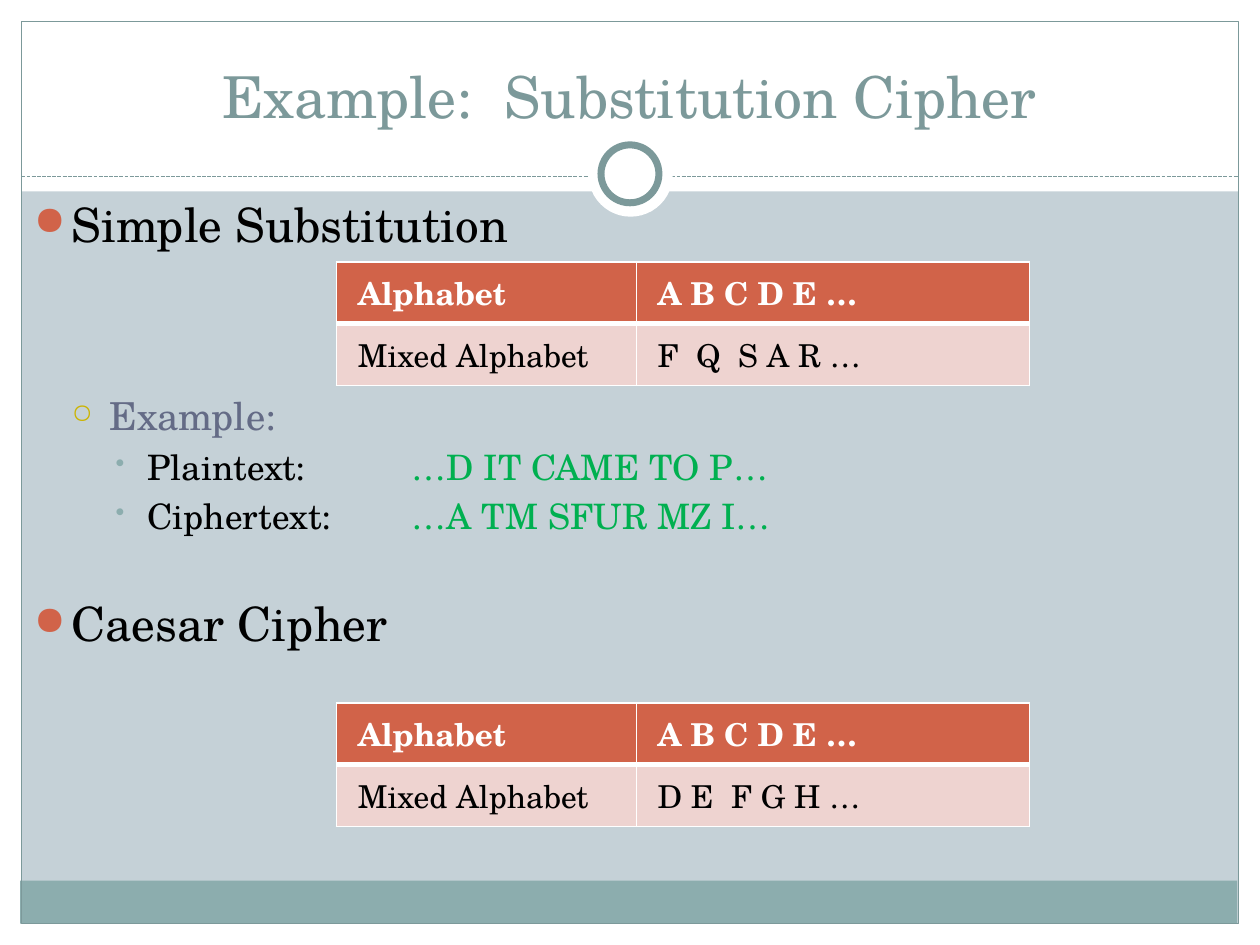
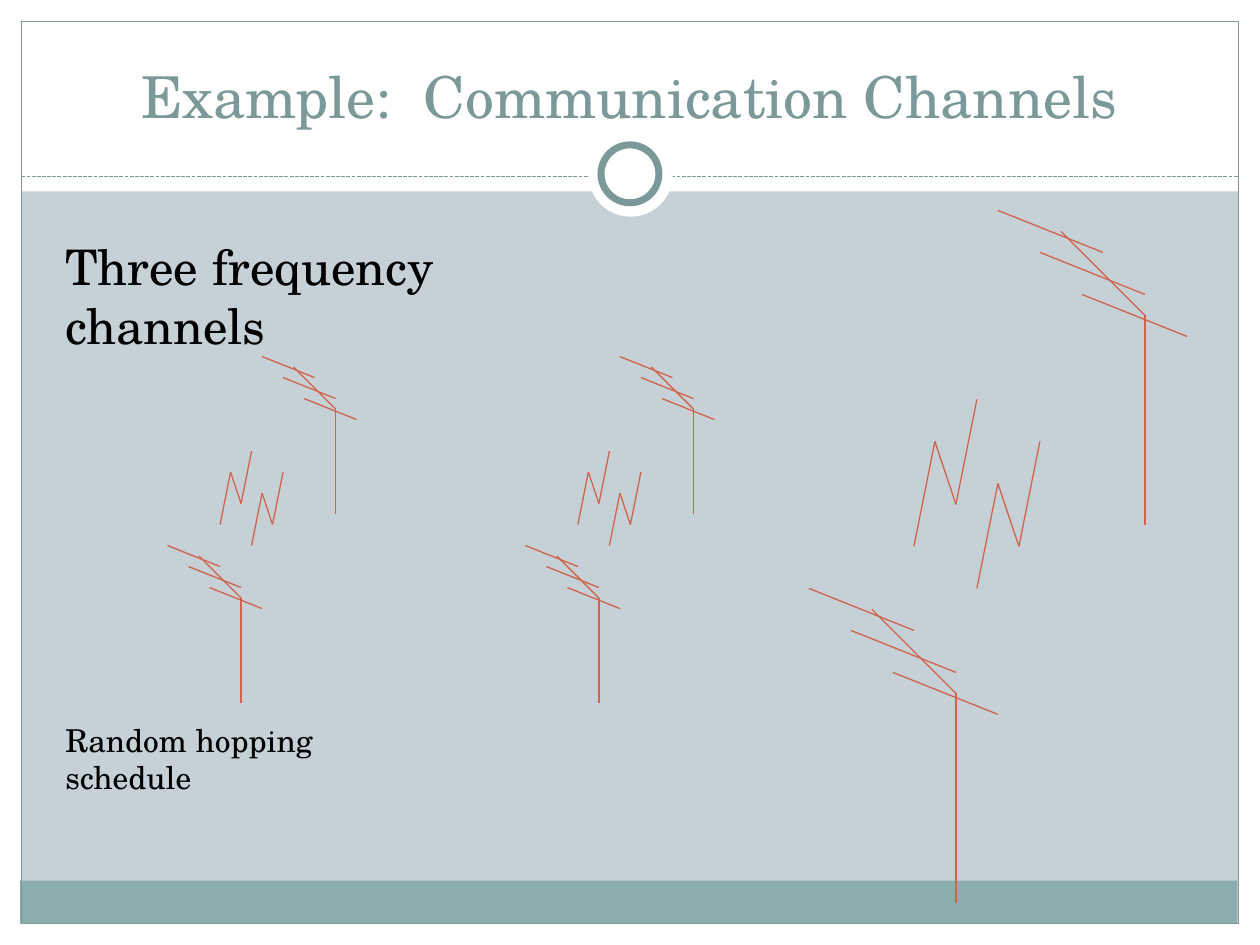
from lxml.etree import SubElement
from pptx import Presentation
from pptx.dml.color import RGBColor
from pptx.enum.dml import MSO_LINE
from pptx.enum.shapes import MSO_CONNECTOR, MSO_SHAPE
from pptx.enum.text import MSO_ANCHOR, MSO_AUTO_SIZE, PP_ALIGN
from pptx.oxml.ns import qn
from pptx.util import Inches, Pt

FONT = "TeX Gyre Schola"
COLORS = {
    "page": "C5D1D7",
    "white": "FFFFFF",
    "black": "000000",
    "teal": "7C999A",
    "band": "8CADAE",
    "rust": "D16349",
    "blush": "EED3D0",
    "gold": "CCB400",
    "slate": "646B86",
    "green": "00B050",
}
LEVELS = [
    {"margin": 0.3, "indent": -0.3, "char": "●", "color": "rust", "percent": 85, "size": 27},
    {"margin": 0.6, "indent": -0.3, "char": "○", "color": "gold", "percent": 70, "size": 22},
    {"margin": 0.9, "indent": -0.25, "char": "•", "color": "band", "percent": 75, "size": 20},
]
OUTLINE = [
    (0, 0, [("Simple Substitution", "black")]),
    (1, 80, [("Example:", "slate")]),
    (2, 4, [("Plaintext: \t", "black"), ("…D IT CAME TO P…", "green")]),
    (2, 4, [("Ciphertext:", "black"), ("\t…A TM SFUR MZ I…", "green")]),
    (0, 33.4, [("Caesar Cipher", "black")]),
]
ANTENNA = [
    (0, 0, 5, 2),
    (2, 2, 7, 4),
    (4, 4, 9, 6),
    (3, 1, 7, 5),
    (7, 5, 7, 15),
]
BOLT = [(0, 0, 1, -5), (1, -5, 2, -2), (2, -2, 3, -7)]
CHANNEL_PARTS = [
    (ANTENNA, 0, 18),
    (ANTENNA, 9, 0),
    (BOLT, 5, 16),
    (BOLT, 8, 18),
]


def rgb(name):
    """Return the palette colour with this name."""
    return RGBColor.from_string(COLORS[name])


def add_span(para, text, size, color, bold=False):
    """Append one formatted run to a paragraph."""
    span = para.add_run()
    span.text = text
    span.font.name = FONT
    span.font.size = Pt(size)
    span.font.bold = bold
    span.font.color.rgb = rgb(color)


def add_figure(page, kind, box, fill=None, line=None, width=0.75):
    """Add a preset shape with an optional fill and outline."""
    shape = page.shapes.add_shape(kind, *map(Inches, box))
    shape.shadow.inherit = False
    if fill:
        shape.fill.solid()
        shape.fill.fore_color.rgb = rgb(fill)
    else:
        shape.fill.background()
    if line:
        shape.line.color.rgb = rgb(line)
        shape.line.width = Pt(width)
    else:
        shape.line.fill.background()


def add_line(shapes, ends, color):
    """Add a thin straight line without a shadow and return it."""
    line = shapes.add_connector(MSO_CONNECTOR.STRAIGHT, *map(Inches, ends))
    line.line.color.rgb = rgb(color)
    line.line.width = Pt(0.75)
    SubElement(line._element.spPr, qn("a:effectLst"))
    return line


def add_frame(page):
    """Draw the margins, footer band, outline, divider and ring."""
    margins = [
        (0, 7.33, 10, 0.17),
        (0, 0, 10, 1.52),
        (0, 0, 0.17, 7.5),
        (9.83, 0, 0.17, 7.5),
    ]
    for box in margins:
        add_figure(page, MSO_SHAPE.RECTANGLE, box, fill="white")
    add_figure(page, MSO_SHAPE.RECTANGLE, (0.16, 6.99, 9.66, 0.34), fill="band")
    add_figure(page, MSO_SHAPE.RECTANGLE, (0.17, 0.17, 9.66, 7.16), line="teal")
    divider = add_line(page.shapes, (0.17, 1.4, 9.83, 1.4), "teal")
    divider.line.dash_style = MSO_LINE.SQUARE_DOT
    add_figure(page, MSO_SHAPE.OVAL, (4.67, 1.05, 0.67, 0.67), fill="white")
    add_figure(page, MSO_SHAPE.OVAL, (4.77, 1.15, 0.46, 0.46), "white", "teal", 4)


def add_page(deck, text):
    """Add a framed slide with its title above the frame."""
    page = deck.slides.add_slide(deck.slide_layouts[5])
    add_frame(page)
    title = page.shapes.title
    title.left, title.top, title.width, title.height = map(Inches, (0.33, 0.25, 9.33, 0.83))
    title._element.getparent().append(title._element)
    frame = title.text_frame
    frame.auto_size = MSO_AUTO_SIZE.NONE
    frame.vertical_anchor = MSO_ANCHOR.BOTTOM
    para = frame.paragraphs[0]
    para.alignment = PP_ALIGN.CENTER
    add_span(para, text, 33, "teal")
    return page


def add_text_frame(page, box):
    """Add a wrapping text box and return its text frame."""
    frame = page.shapes.add_textbox(*map(Inches, box)).text_frame
    frame.word_wrap = True
    return frame


def set_bullet(para, level):
    """Give a paragraph the indent and bullet of its level."""
    props = para._p.get_or_add_pPr()
    props.set("marL", str(Inches(level["margin"])))
    props.set("indent", str(Inches(level["indent"])))
    props.set("defTabSz", str(Inches(1)))
    color = SubElement(props, qn("a:buClr"))
    SubElement(color, qn("a:srgbClr"), val=COLORS[level["color"]])
    SubElement(props, qn("a:buSzPct"), val=str(level["percent"] * 1000))
    SubElement(props, qn("a:buChar"), char=level["char"])


def add_outline(page, box):
    """Write the bulleted outline of the ciphers."""
    frame = add_text_frame(page, box)
    for index, (depth, gap, spans) in enumerate(OUTLINE):
        para = frame.add_paragraph() if index else frame.paragraphs[0]
        para.level = depth
        para.space_before = Pt(gap)
        set_bullet(para, LEVELS[depth])
        for text, color in spans:
            add_span(para, text, LEVELS[depth]["size"], color)


def set_borders(cell, widths):
    """Draw white cell borders with widths given by side."""
    props = cell._tc.get_or_add_tcPr()
    for side, width in widths.items():
        line = SubElement(props, qn(f"a:ln{side}"), w=str(Pt(width)))
        fill = SubElement(line, qn("a:solidFill"))
        SubElement(fill, qn("a:srgbClr"), val=COLORS["white"])


def add_cipher_table(page, box, mixed):
    """Add a table that maps the alphabet to a mixed alphabet."""
    table = page.shapes.add_table(2, 2, *map(Inches, box)).table
    table.horz_banding = False
    for column, width in zip(table.columns, (2.38, 3.12)):
        column.width = Inches(width)
    rows = [
        (("Alphabet", "A B C D E …"), "rust", "white", True, {"T": 1, "B": 3}),
        (("Mixed Alphabet", mixed), "blush", "black", False, {"T": 3, "B": 1}),
    ]
    for row, (texts, fill, color, bold, edges) in zip(table.rows, rows):
        row.height = Inches(box[3] / 2)
        for cell, text in zip(row.cells, texts):
            set_borders(cell, {"L": 1, "R": 1, **edges})
            cell.fill.solid()
            cell.fill.fore_color.rgb = rgb(fill)
            cell.margin_left = cell.margin_right = Inches(0.17)
            cell.vertical_anchor = MSO_ANCHOR.MIDDLE
            add_span(cell.text_frame.paragraphs[0], text, 18, color, bold)


def add_channel(page, left, top, unit):
    """Draw two antennas with signal bolts on a grid of the given unit."""
    shapes = page.shapes.add_group_shape().shapes
    for strokes, across, down in CHANNEL_PARTS:
        x, y = left + across * unit, top + down * unit
        for x1, y1, x2, y2 in strokes:
            ends = (x + x1 * unit, y + y1 * unit, x + x2 * unit, y + y2 * unit)
            add_line(shapes, ends, "rust")


def build_substitution(deck):
    """Build the slide on substitution ciphers."""
    page = add_page(deck, "Example:  Substitution Cipher")
    add_outline(page, (0.17, 1.5, 9.67, 5.83))
    for top, mixed in ((2.08, "F  Q  S A R …"), (5.58, "D E  F G H …")):
        add_cipher_table(page, (2.67, top, 5.5, 0.98), mixed)


def build_channels(deck):
    """Build the slide on communication channels."""
    page = add_page(deck, "Example:  Communication Channels")
    for left, top, unit in ((1.33, 2.83, 1 / 12), (4.17, 2.83, 1 / 12), (6.42, 1.67, 1 / 6)):
        add_channel(page, left, top, unit)
    captions = [
        ("Three frequency channels", (0.42, 1.83, 4.66, 0.57), 28),
        ("Random hopping schedule", (0.42, 5.67, 3.18, 0.4), 18),
    ]
    for text, box, size in captions:
        add_span(add_text_frame(page, box).paragraphs[0], text, size, "black")


def main():
    """Build and save the deck."""
    deck = Presentation()
    deck.slide_width, deck.slide_height = Inches(10), Inches(7.5)
    backdrop = deck.slide_master.background.fill
    backdrop.solid()
    backdrop.fore_color.rgb = rgb("page")
    build_substitution(deck)
    build_channels(deck)
    deck.save("out.pptx")


if __name__ == "__main__":
    main()
